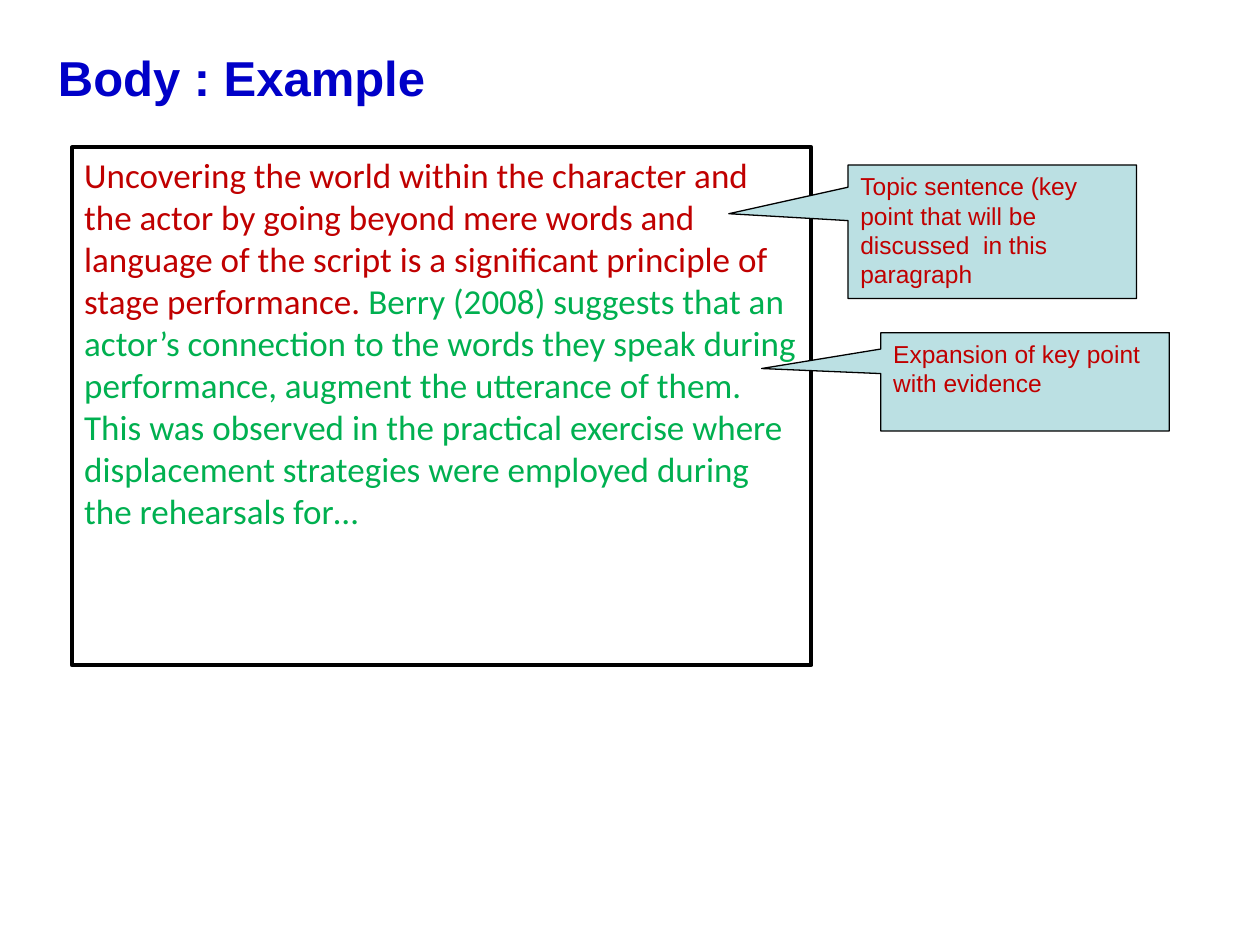
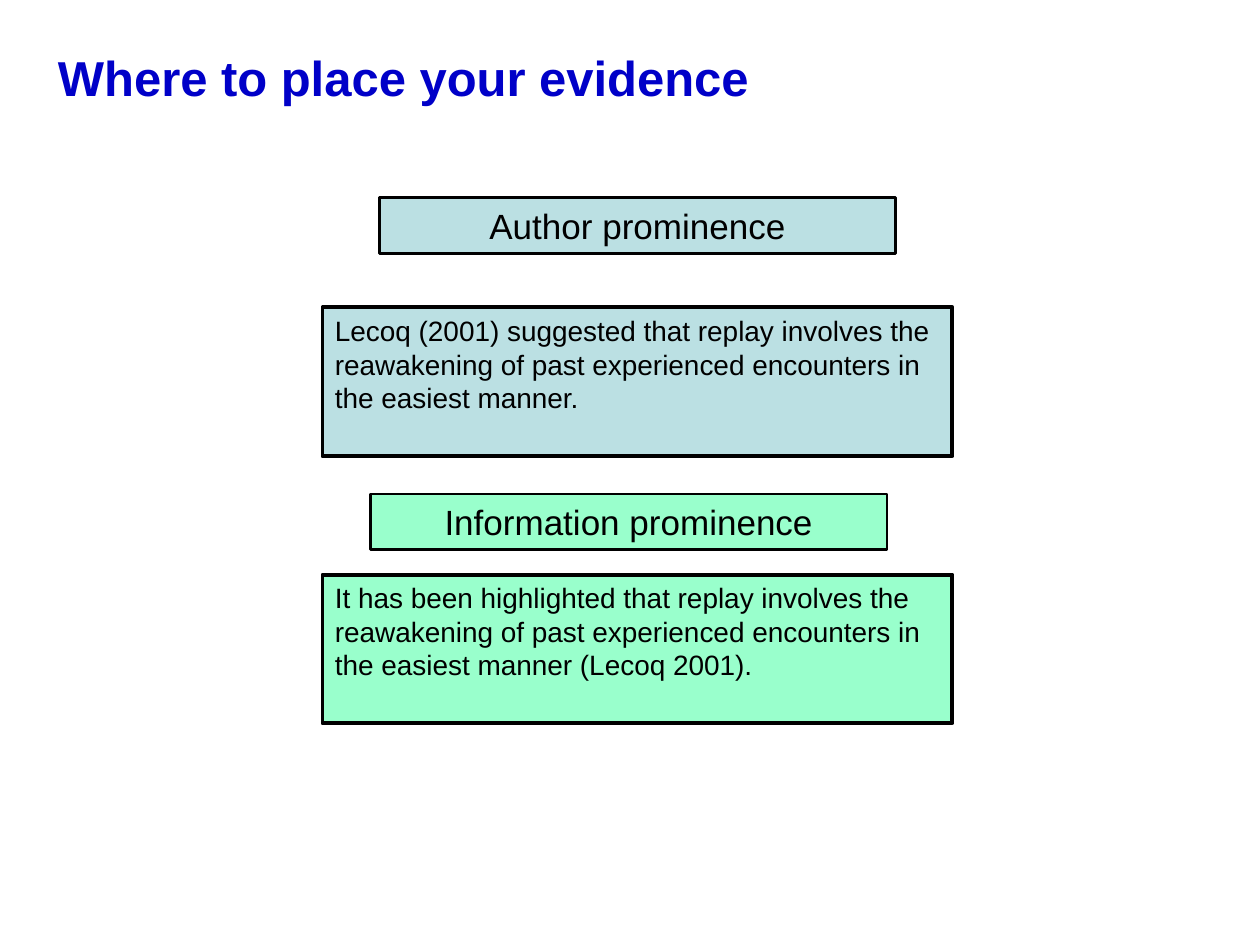
from pptx import Presentation
from pptx.dml.color import RGBColor
from pptx.enum.shapes import MSO_SHAPE as Shape
from pptx.enum.text import MSO_ANCHOR as Anchor, PP_ALIGN as Align
from pptx.util import Inches, Pt

WIDTH, HEIGHT = Inches(10), Inches(7.5)
COLUMN, ROW = WIDTH / 100, HEIGHT / 75
TITLE_ONLY = 5

TITLE_BLUE = RGBColor(0x00, 0x00, 0xC8)
BLACK = RGBColor(0x00, 0x00, 0x00)
WHITE = RGBColor(0xFF, 0xFF, 0xFF)
TOPIC_RED = RGBColor(0xC0, 0x00, 0x00)
EVIDENCE_GREEN = RGBColor(0x00, 0xB0, 0x50)
PALE_BLUE = RGBColor(0xBB, 0xE0, 0xE3)
MINT = RGBColor(0x99, 0xFF, 0xCC)

TOPIC_SENTENCE = (
    "Uncovering the world within the character and the actor by going beyond mere words "
    "and language of the script is a significant principle of stage performance. "
)
EXPANSION = (
    "Berry (2008) suggests that an actor’s connection to the words they speak during "
    "performance, augment the utterance of them. This was observed in the practical exercise "
    "where displacement strategies were employed during the rehearsals for…"
)
CALLOUTS = [
    ((67.3, 13.1, 22.9, 10.6),
     "Topic sentence (key point that will be discussed  in this paragraph"),
    ((69.9, 26.4, 22.9, 7.8), "Expansion of key point with evidence"),
]
PROMINENCES = [
    ("Author prominence", (30.1, 15.7), 24.4, PALE_BLUE,
     "Lecoq (2001) suggested that replay involves the reawakening of past experienced "
     "encounters in the easiest manner."),
    ("Information prominence", (29.4, 39.2), 45.6, MINT,
     "It has been highlighted that replay involves the reawakening of past experienced "
     "encounters in the easiest manner (Lecoq 2001)."),
]


def grid(left, top, columns, rows):
    """Turn a place on the 100 by 75 grid into slide lengths."""
    return (round(left * COLUMN), round(top * ROW),
            round(columns * COLUMN), round(rows * ROW))


def set_font(font, size, color, name="Arial", bold=False):
    """Set the look of a font."""
    font.name, font.size, font.bold = name, Pt(size), bold
    font.color.rgb = color


def add_titled_slide(deck, title):
    """Add a slide with the shared title style."""
    page = deck.slides.add_slide(deck.slide_layouts[TITLE_ONLY])
    box = page.shapes.title
    box.left, box.top, box.width, box.height = grid(3.6, 2.9, 91.1, 7.3)
    frame = box.text_frame
    frame.text = title
    frame.vertical_anchor = Anchor.TOP
    frame.margin_top = Inches(0.09)
    para = frame.paragraphs[0]
    para.alignment = Align.LEFT
    set_font(para.font, 28, TITLE_BLUE, bold=True)
    return page


def add_box(page, place, fill, line_width, spans, size, name="Arial",
            align=Align.LEFT, kind=Shape.RECTANGLE):
    """Add an outlined box holding one paragraph of coloured spans."""
    box = page.shapes.add_shape(kind, *grid(*place))
    box.shadow.inherit = False
    box.fill.solid()
    box.fill.fore_color.rgb = fill
    box.line.color.rgb = BLACK
    box.line.width = Pt(line_width)
    frame = box.text_frame
    frame.word_wrap = True
    frame.vertical_anchor = Anchor.TOP
    para = frame.paragraphs[0]
    para.alignment = align
    set_font(para.font, size, spans[0][1], name)
    for text, color in spans:
        span = para.add_run()
        span.text = text
        span.font.color.rgb = color
    return box


def add_callout(page, place, text):
    """Add a note whose pointer reaches left into the example."""
    note = add_box(page, place, PALE_BLUE, 0.75, [(text, TOPIC_RED)], 14,
                   kind=Shape.RECTANGULAR_CALLOUT)
    note.adjustments[0], note.adjustments[1] = -0.913, -0.135


def add_prominence(page, label, corner, example_top, fill, example):
    """Add a centred label and the example sentence below it."""
    add_box(page, (*corner, 41, 4.4), fill, 1.5, [(label, BLACK)], 20, align=Align.CENTER)
    add_box(page, (25.6, example_top, 50, 11.8), fill, 2.25, [(example, BLACK)], 16)


def main():
    """Build and save the deck."""
    deck = Presentation()
    deck.slide_width, deck.slide_height = WIDTH, HEIGHT

    page = add_titled_slide(deck, "Body : Example")
    add_box(page, (5.7, 11.7, 58.7, 41.1), WHITE, 2.25,
            [(TOPIC_SENTENCE, TOPIC_RED), (EXPANSION, EVIDENCE_GREEN)], 20, "Calibri")
    for place, text in CALLOUTS:
        add_callout(page, place, text)

    page = add_titled_slide(deck, "Where to place your evidence")
    for prominence in PROMINENCES:
        add_prominence(page, *prominence)

    deck.save("out.pptx")


if __name__ == "__main__":
    main()
